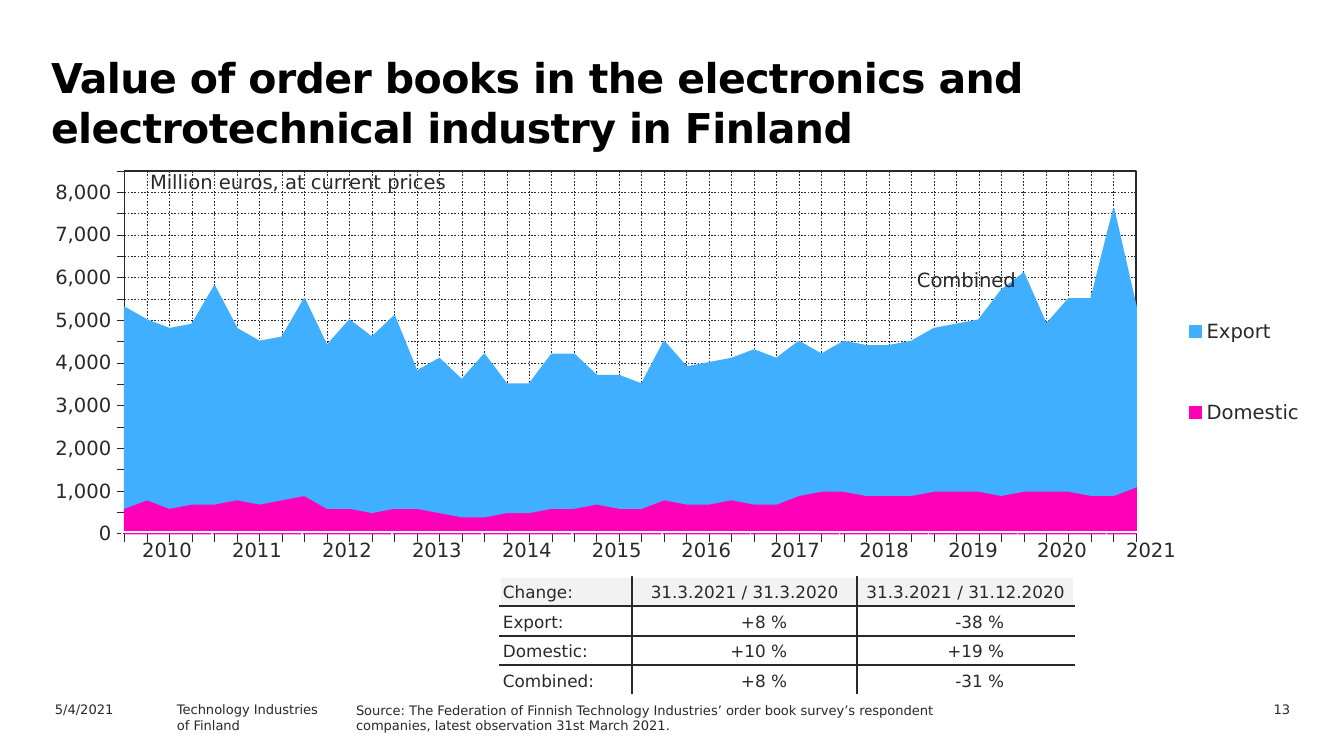
"""Build the slide on order books in the Finnish electronics industry."""
from dataclasses import dataclass
from typing import NamedTuple

from lxml.etree import SubElement
from pptx import Presentation
from pptx.chart.data import CategoryChartData
from pptx.dml.color import RGBColor
from pptx.enum.chart import XL_CHART_TYPE as ChartType
from pptx.enum.chart import XL_LEGEND_POSITION as LegendPos
from pptx.enum.chart import XL_TICK_LABEL_POSITION as LabelPos
from pptx.enum.chart import XL_TICK_MARK as Tick
from pptx.enum.dml import MSO_LINE as Dash
from pptx.enum.text import MSO_ANCHOR as Anchor
from pptx.enum.text import MSO_AUTO_SIZE as AutoSize
from pptx.enum.text import PP_ALIGN as Align
from pptx.oxml.ns import qn
from pptx.util import Emu, Pt

SCALE = 914400 / 134.4


@dataclass(frozen=True)
class Theme:
    face: str = "DejaVu Sans"
    ink: str = "29282E"
    title_ink: str = "000000"
    paper: str = "FFFFFF"
    header: str = "F2F2F2"
    domestic: str = "FF00B8"
    export: str = "40AFFF"
    title: float = 22
    label: float = 10.5
    cell: float = 9
    footer: float = 7


THEME = Theme()


class Box(NamedTuple):
    left: int
    top: int
    width: int
    height: int


class Note(NamedTuple):
    lines: tuple[str, ...]
    box: Box
    size: float
    align: Align = Align.LEFT
    inset: int = 13


class Series(NamedTuple):
    name: str
    hundreds: tuple[int, ...]
    color: str


NOTES = (
    Note(("13",), Box(1177, 695, 126, 24), THEME.footer, Align.RIGHT),
    Note(("Million euros, at current prices",), Box(138, 163, 328, 36), THEME.label, inset=12),
    Note(("Combined",), Box(905, 261, 142, 36), THEME.label, inset=12),
    Note(("Technology Industries", "of Finland"), Box(164, 695, 242, 24), THEME.footer),
    Note(("5/4/2021",), Box(42, 695, 134, 24), THEME.footer),
)

SERIES = (
    Series("Domestic", (
        6, 8, 6, 7, 7, 8, 7, 8, 9, 6, 6, 5, 6, 6, 5, 4, 4, 5, 5, 6, 6, 7, 6,
        6, 8, 7, 7, 8, 7, 7, 9, 10, 10, 9, 9, 9, 10, 10, 10, 9, 10, 10, 10, 9, 9, 11,
    ), THEME.domestic),
    Series("Export", (
        47, 42, 42, 42, 51, 40, 38, 38, 46, 38, 44, 41, 45, 32, 36, 32, 38, 30, 30, 36, 36, 30, 31,
        29, 37, 32, 33, 33, 36, 34, 36, 32, 35, 35, 35, 36, 38, 39, 40, 48, 51, 39, 45, 46, 67, 42,
    ), THEME.export),
)

CHANGES = (
    ("Change:", "31.3.2021 / 31.3.2020", "31.3.2021 / 31.12.2020"),
    ("Export:", "+8 %", "-38 %"),
    ("Domestic:", "+10 %", "+19 %"),
    ("Combined:", "+8 %", "-31 %"),
)


def px(length: int) -> Emu:
    return Emu(round(length * SCALE))


def rgb(color: str) -> RGBColor:
    return RGBColor.from_string(color)


def style_font(font, size: float, color: str = THEME.ink, bold: bool = False) -> None:
    font.name, font.size, font.bold = THEME.face, Pt(size), bold
    font.color.rgb = rgb(color)


def add_run(paragraph, text: str, size: float, color: str = THEME.ink, bold: bool = False):
    run = paragraph.add_run()
    run.text = text
    style_font(run.font, size, color, bold)
    return run


def set_insets(holder, left: int, top: int, right: int, bottom: int) -> None:
    holder.margin_left, holder.margin_top = px(left), px(top)
    holder.margin_right, holder.margin_bottom = px(right), px(bottom)


def fill_placeholder(holder, box: Box, top_inset: int):
    holder.left, holder.top, holder.width, holder.height = map(px, box)
    frame = holder.text_frame
    frame.word_wrap, frame.auto_size = True, AutoSize.NONE
    frame.vertical_anchor = Anchor.TOP
    set_insets(frame, 13, top_inset, 13, 0)
    paragraph = frame.paragraphs[0]
    properties = paragraph._p.get_or_add_pPr()
    properties.set("marL", "0")
    properties.set("indent", "0")
    SubElement(properties, qn("a:buNone"))
    paragraph.alignment = Align.LEFT
    paragraph.space_before = Pt(0)
    return paragraph


def add_note(slide, note: Note) -> None:
    frame = slide.shapes.add_textbox(*map(px, note.box)).text_frame
    frame.word_wrap = True
    set_insets(frame, note.inset, 7, note.inset, 0)
    for index, line in enumerate(note.lines):
        paragraph = frame.add_paragraph() if index else frame.paragraphs[0]
        paragraph.alignment = note.align
        add_run(paragraph, line, note.size)


def set_layout(parent, index: int, inner: bool, **fractions: float) -> None:
    for old in parent.findall(qn("c:layout")):
        parent.remove(old)
    layout = SubElement(parent, qn("c:layout"))
    parent.insert(index, layout)
    manual = SubElement(layout, qn("c:manualLayout"))
    if inner:
        SubElement(manual, qn("c:layoutTarget"), val="inner")
    for side in "xy":
        SubElement(manual, qn(f"c:{side}Mode"), val="edge")
    for side, value in fractions.items():
        SubElement(manual, qn(f"c:{side}"), val=str(value))


def add_solid(parent, color: str) -> None:
    SubElement(SubElement(parent, qn("a:solidFill")), qn("a:srgbClr"), val=color)


def style_axis(axis) -> None:
    axis.major_tick_mark, axis.minor_tick_mark = Tick.OUTSIDE, Tick.NONE
    axis.has_major_gridlines = True
    grid = axis.major_gridlines.format.line
    for line, width in ((axis.format.line, 0.22), (grid, 0.25)):
        line.color.rgb, line.width = rgb(THEME.ink), Pt(width)
    grid.dash_style = Dash.DASH
    style_font(axis.tick_labels.font, THEME.label)


def add_order_chart(slide, box: Box) -> None:
    data = CategoryChartData(number_format="#,##0")
    data.categories = [str(quarter + 1) for quarter in range(len(SERIES[0].hundreds))]
    for series in SERIES:
        data.add_series(series.name, [value * 100 for value in series.hundreds])
    chart = slide.shapes.add_chart(ChartType.AREA_STACKED, *map(px, box), data).chart
    chart.has_title = False
    style_font(chart.font, THEME.label)
    for area, series in zip(chart.plots[0].series, SERIES):
        area.format.fill.solid()
        area.format.fill.fore_color.rgb = rgb(series.color)
        area.format.line.color.rgb = rgb(series.color)
        area.format.line.width = Pt(0.88)
    quarters, euros = chart.category_axis, chart.value_axis
    style_axis(quarters)
    style_axis(euros)
    quarters.tick_label_position = LabelPos.NONE
    euros.minimum_scale, euros.maximum_scale, euros.major_unit = 0, 8500, 500
    euros.tick_labels.number_format = "#,##0"
    euros.tick_labels.number_format_is_linked = False
    plot_area = chart._chartSpace.chart.plotArea
    next(plot_area.iter(qn("c:crossBetween"))).set("val", "midCat")
    set_layout(plot_area, 0, True, x=0.075, y=0.029, w=0.777, h=0.885)
    frame = SubElement(plot_area, qn("c:spPr"))
    SubElement(frame, qn("a:noFill"))
    add_solid(SubElement(frame, qn("a:ln"), w=str(Pt(0.88))), THEME.ink)
    chart.has_legend = True
    legend = chart.legend
    legend.position, legend.include_in_layout = LegendPos.RIGHT, False
    style_font(legend.font, THEME.label)
    set_layout(legend._element, 1, False, x=0.885, y=0.25, w=0.1, h=0.54)


def add_plain_table(slide, left: int, top: int, widths: list[int], heights: list[int]):
    box = Box(left, top, sum(widths), sum(heights))
    table = slide.shapes.add_table(len(heights), len(widths), *map(px, box)).table
    table.first_row = table.horz_banding = False
    for column, width in zip(table.columns, widths):
        column.width = px(width)
    for row, height in zip(table.rows, heights):
        row.height = px(height)
    for cell in table.iter_cells():
        cell.fill.background()
    return table


def set_borders(cell, **colors: str) -> None:
    properties = cell._tc.get_or_add_tcPr()
    for index, (side, color) in enumerate(colors.items()):
        line = SubElement(properties, qn(f"a:ln{side}"), w=str(Pt(1)))
        properties.insert(index, line)
        add_solid(line, color)


def add_change_table(slide) -> None:
    table = add_plain_table(slide, 500, 577, [132, 225, 217], [29, 30, 29, 30])
    last_row, last_column = len(CHANGES) - 1, len(CHANGES[0]) - 1
    for r, texts in enumerate(CHANGES):
        for c, text in enumerate(texts):
            cell = table.cell(r, c)
            is_value = r > 0 and c > 0
            cell.vertical_anchor = Anchor.BOTTOM
            set_insets(cell, 3, 3, 70 if is_value else 3, 3)
            paragraph = cell.text_frame.paragraphs[0]
            paragraph.alignment = Align.RIGHT if is_value else Align.CENTER if c else Align.LEFT
            add_run(paragraph, text, THEME.cell)
            if r in (0, last_row):
                cell.fill.solid()
                cell.fill.fore_color.rgb = rgb(THEME.paper if r else THEME.header)
            outer = {"L": c == 0, "R": c == last_column, "T": r == 0, "B": r == last_row}
            set_borders(cell, **{s: THEME.paper if edge else THEME.ink for s, edge in outer.items()})


def add_year_table(slide) -> None:
    table = add_plain_table(slide, 122, 532, [90] * 6 + [89] * 6, [42])
    for year, cell in enumerate(table.iter_cells(), 2010):
        set_insets(cell, 13, 7, 13, 7)
        paragraph = cell.text_frame.paragraphs[0]
        paragraph.alignment = Align.CENTER
        add_run(paragraph, str(year), THEME.label)


def main() -> None:
    deck = Presentation()
    deck.slide_width, deck.slide_height = px(1344), px(756)
    slide = deck.slides.add_slide(deck.slide_layouts[1])
    heading = fill_placeholder(slide.shapes.title, Box(38, 42, 1175, 95), 9)
    heading.line_spacing = Pt(27)
    headline = "Value of order books in the electronics and electrotechnical industry in Finland"
    run = add_run(heading, headline, THEME.title, THEME.title_ink, True)
    run.font._element.set("spc", "-30")
    source = fill_placeholder(slide.placeholders[1], Box(343, 695, 672, 35), 7)
    add_run(source, "Source: The Federation of Finnish Technology Industries’ order book survey’s "
            "respondent companies, latest observation 31st March 2021.", THEME.footer)
    add_order_chart(slide, Box(27, 159, 1302, 410))
    add_change_table(slide)
    add_year_table(slide)
    for note in NOTES:
        add_note(slide, note)
    deck.save("out.pptx")


if __name__ == "__main__":
    main()
